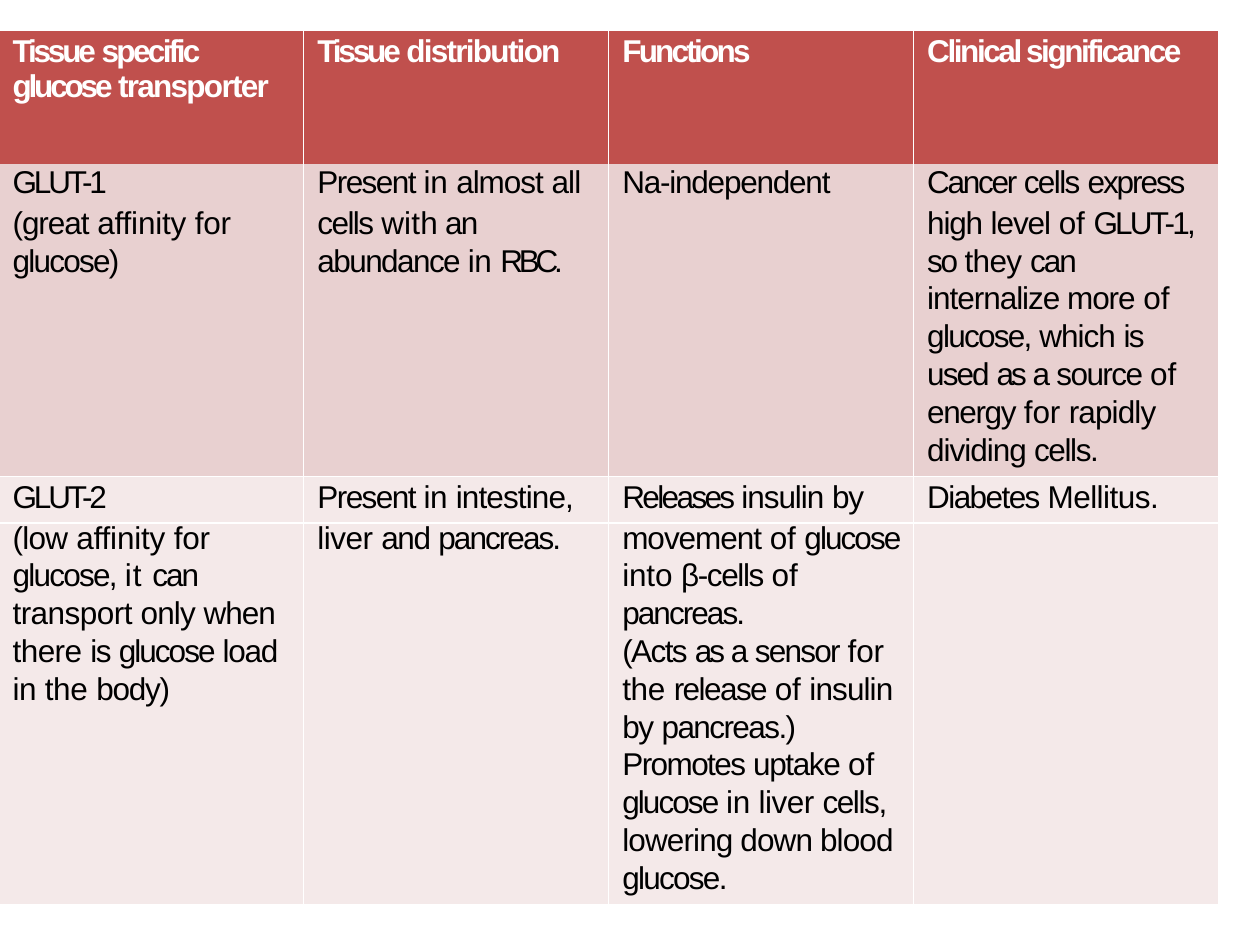
from dataclasses import dataclass

from lxml import etree
from pptx import Presentation
from pptx import util as u
from pptx.dml.color import RGBColor
from pptx.enum import text
from pptx.oxml import ns

WHITE = RGBColor(0xFF, 0xFF, 0xFF)
BLACK = RGBColor(0x00, 0x00, 0x00)
RED = RGBColor(0xC0, 0x50, 0x4D)
ROSE = RGBColor(0xE8, 0xD0, 0xD0)
PALE = RGBColor(0xF4, 0xE9, 0xE9)

NO_STYLE = "{2D5ABB26-0587-4C30-8999-92F81FD0307C}"
COLUMN_WIDTH, LINE_HEIGHT, LAST_HEIGHT = 2.42, 0.3, 0.33

# A line is a sequence of (words, letter spacing in points)
Line = list[tuple[str, float]]


@dataclass
class Section:
    """A band of table rows: one text line per row in each column."""
    fill: RGBColor
    first_height: float
    top_margin: float
    space_before: float
    columns: list[list[Line]]
    has_top: bool = True
    has_bottom: bool = True

    def row_heights(self) -> list[float]:
        count = max(len(lines) for lines in self.columns)
        return [self.first_height] + [LINE_HEIGHT] * (count - 2) + [LAST_HEIGHT] * (count > 1)


# The header is a single row, so its two-line title is joined by HEADER_REST
HEADER = Section(RED, 1.06, 0.03, 2.4, [
    [[("Tissue ", -1.8), ("specific", -1.5)]],
    [[("Tissue ", -1.8), ("distribution", -1)]],
    [[("Functions", -1.6)]],
    [[("Clinical significance", -1.4)]],
], has_bottom=False)
HEADER_REST: Line = [("glucose ", -1.8), ("transporter", -1)]

GLUT_1 = Section(ROSE, 0.35, 0.01, 0.9, [
    [
        [("GLUT-1", -1.8)],
        [("(great ", -0.6), ("affinity for", -0.1)],
        [("glucose)", -1)],
    ], [
        [("Present ", -0.9), ("in ", -0.2), ("almost ", -0.6), ("all", -0.5)],
        [("cells ", -0.9), ("with", 0.1), (" an", -1)],
        [("abundance ", -0.9), ("in ", -0.2), ("RBC.", -2.4)],
    ], [
        [("Na-independent", -0.7)],
    ], [
        [("Cancer ", -1.3), ("cells ", -0.9), ("express", -1.2)],
        [("high ", -0.7), ("level ", -0.6), ("of ", -0.1), ("GLUT-1,", -1.6)],
        [("so ", -1.3), ("they ", -0.4), ("can", -1.2)],
        [("internalize more ", -0.6), ("of", -0.1)],
        [("glucose, ", -1), ("which ", -0.6), ("is", -0.9)],
        [("used ", -1.1), ("as ", -1.7), ("a ", -1.4), ("source ", -0.9), ("of", -0.1)],
        [("energy ", -0.8), ("for ", -0.1), ("rapidly", -0.5)],
        [("dividing", -0.6), (" cells.", -0.8)],
    ],
], has_top=False)

GLUT_2 = Section(PALE, 0.37, 0.03, 2.5, [
    [
        [("GLUT-2", -1.8)],
        [("(low ", -0.4), ("affinity for", -0.1)],
        [("glucose, ", -1), ("it ", 0.6), ("can", -1.2)],
        [("transport ", -0.3), ("only ", -0.5), ("when", -0.6)],
        [("there ", -0.3), ("is ", -0.9), ("glucose ", -1.1), ("load", -0.7)],
        [("in the ", -0.2), ("body)", -0.7)],
    ], [
        [("Present ", -0.9), ("in ", -0.3), ("intestine,", -0.5)],
        [("liver ", -0.3), ("and ", -0.8), ("pancreas.", -1.1)],
    ], [
        [("Releases ", -1.5), ("insulin ", -0.6), ("by", -0.8)],
        [("movement ", -0.6), ("of ", -0.1), ("glucose", -1.1)],
        [("into ", -0.1), ("β-cells ", -0.8), ("of", -0.1)],
        [("pancreas.", -1.1)],
        [("(Acts ", -0.9), ("as ", -1.7), ("a ", -1.4), ("sensor ", -1), ("for", -0.1)],
        [("the ", -0.2), ("release ", -0.9), ("of ", -0.1), ("insulin", -0.5)],
        [("by ", -0.8), ("pancreas.)", -0.9)],
        [("Promotes ", -0.9), ("uptake ", -0.8), ("of", -0.1)],
        [("glucose ", -1.1), ("in ", -0.2), ("liver ", -0.3), ("cells,", -0.8)],
        [("lowering down blood", -0.5)],
        [("glucose.", -1)],
    ], [
        [("Diabetes ", -0.9), ("Mellitus.", -0.3)],
    ],
])
SECTIONS = [HEADER, GLUT_1, GLUT_2]


def write_line(paragraph, line: Line, color: RGBColor, bold: bool) -> None:
    properties = paragraph._p.get_or_add_pPr()
    properties.set("marL", str(u.Inches(0.11)))
    properties.set("indent", "0")
    paragraph.alignment = text.PP_ALIGN.LEFT
    for words, spacing in line:
        run = paragraph.add_run()
        run.text = words
        run.font.name = "Arial"
        run.font.size = u.Pt(18)
        run.font.bold = bold
        run.font.color.rgb = color
        run._r.get_or_add_rPr().set("spc", str(round(spacing * 100)))


def add_borders(cell, sides: str) -> None:
    """Draw white one-point borders; they must precede the cell's fill."""
    properties = cell._tc.get_or_add_tcPr()
    for position, side in enumerate(sides):
        border = etree.Element(ns.qn(f"a:ln{side}"), w=str(u.Pt(1)))
        fill = etree.SubElement(border, ns.qn("a:solidFill"))
        etree.SubElement(fill, ns.qn("a:srgbClr"), val=str(WHITE))
        properties.insert(position, border)


def fill_section(table, section: Section, start: int) -> None:
    heights = section.row_heights()
    is_header = section is HEADER
    color = WHITE if is_header else BLACK
    for offset, height in enumerate(heights):
        table.rows[start + offset].height = u.Inches(height)
        is_first, is_last = offset == 0, offset == len(heights) - 1
        sides = "LR" + "T" * (is_first and section.has_top) + "B" * (is_last and section.has_bottom)
        for column, lines in enumerate(section.columns):
            cell = table.cell(start + offset, column)
            cell.margin_left = cell.margin_right = cell.margin_bottom = 0
            cell.margin_top = u.Inches(section.top_margin if is_first else 0)
            cell.fill.solid()
            cell.fill.fore_color.rgb = section.fill
            add_borders(cell, sides)
            paragraph = cell.text_frame.paragraphs[0]
            if offset >= len(lines):
                # A small end mark keeps empty cells from stretching the row
                etree.SubElement(paragraph._p, ns.qn("a:endParaRPr"), sz="1000")
                continue
            if is_first:
                paragraph.space_before = u.Pt(section.space_before)
            else:
                paragraph.line_spacing = u.Pt(18.9)
            write_line(paragraph, lines[offset], color, is_header)


def main() -> None:
    presentation = Presentation()
    presentation.slide_width, presentation.slide_height = u.Inches(10), u.Inches(7.5)
    slide = presentation.slides.add_slide(presentation.slide_layouts[6])

    # Table frame
    heights = [height for section in SECTIONS for height in section.row_heights()]
    columns = len(HEADER.columns)
    table = slide.shapes.add_table(
        len(heights), columns, u.Inches(-0.01), u.Inches(0.24),
        u.Inches(columns * COLUMN_WIDTH), u.Inches(sum(heights))).table
    table._tbl.tblPr.find(ns.qn("a:tableStyleId")).text = NO_STYLE
    table.horz_banding = False
    for column in table.columns:
        column.width = u.Inches(COLUMN_WIDTH)

    # Table contents
    start = 0
    for section in SECTIONS:
        fill_section(table, section, start)
        start += len(section.row_heights())
    write_line(table.cell(0, 0).text_frame.add_paragraph(), HEADER_REST, WHITE, True)

    presentation.save("out.pptx")


if __name__ == "__main__":
    main()
